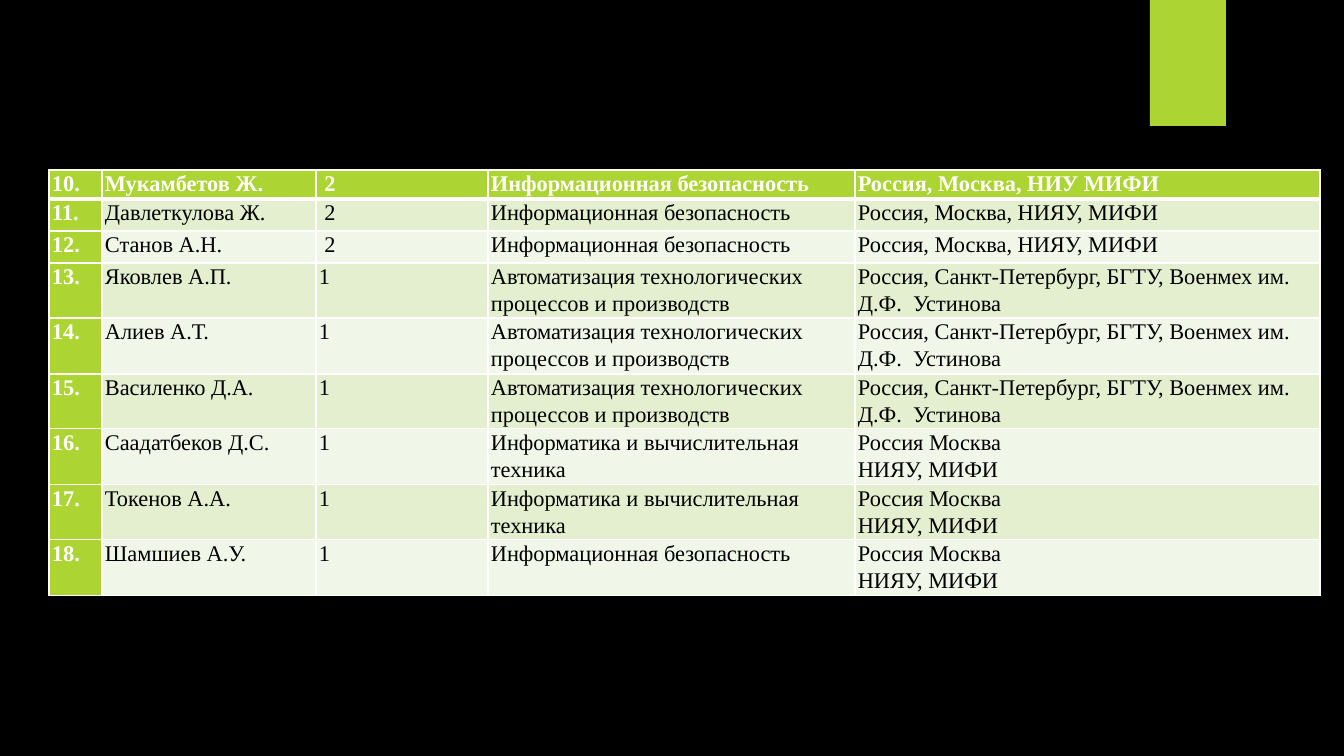
from lxml.etree import SubElement
from pptx import Presentation
from pptx.dml.color import RGBColor
from pptx.enum.shapes import MSO_SHAPE as Preset
from pptx.oxml.ns import qn
from pptx.util import Pt

PX = 914400 / 100.8
GREEN, WHITE, BLACK = "ACD433", "FFFFFF", "000000"
BANDS = ["F1F7E8", "E3EFCE"]
SECURITY = "Информационная безопасность"
AUTOMATION = "Автоматизация технологических процессов и производств"
COMPUTING = "Информатика и вычислительная техника"
MEPHI = "Россия, Москва, НИЯУ, МИФИ"
MEPHI_SHORT = "Россия Москва\nНИЯУ, МИФИ"
VOENMEH = "Россия, Санкт-Петербург, БГТУ, Военмех им. Д.Ф.  Устинова"
STUDENTS = [
    ("Мукамбетов Ж.", " 2", SECURITY, "Россия, Москва, НИУ МИФИ"),
    ("Давлеткулова Ж.", " 2", SECURITY, MEPHI),
    ("Станов А.Н.", " 2", SECURITY, MEPHI),
    ("Яковлев А.П.", "1", AUTOMATION, VOENMEH),
    ("Алиев А.Т.", "1", AUTOMATION, VOENMEH),
    ("Василенко Д.А.", "1", AUTOMATION, VOENMEH),
    ("Саадатбеков Д.С.", "1", COMPUTING, MEPHI_SHORT),
    ("Токенов А.А.", "1", COMPUTING, MEPHI_SHORT),
    ("Шамшиев А.У.", "1", SECURITY, MEPHI_SHORT),
]
FIRST_NUMBER = 10
COLUMNS = [53, 214, 172, 367, 465]
ROWS = [29, 32, 32] + [55, 56] * 3


def px(length):
    return round(length * PX)


def color(value):
    return RGBColor.from_string(value)


class SlideBuilder:
    """Holds the table style and the current slide."""

    font = {"name": "Times New Roman", "size": Pt(16)}
    margins = {"margin_left": px(3), "margin_right": px(3),
               "margin_top": 0, "margin_bottom": 0}

    def __init__(self, deck, background):
        self.page = deck.slides.add_slide(deck.slide_layouts[6])
        fill = self.page.background.fill
        fill.solid()
        fill.fore_color.rgb = color(background)

    def block(self, left, top, width, height, fill):
        box = self.page.shapes.add_shape(
            Preset.RECTANGLE, px(left), px(top), px(width), px(height))
        box.shadow.inherit = False
        box.fill.solid()
        box.fill.fore_color.rgb = color(fill)
        box.line.fill.background()

    def borders(self, cell, **widths):
        properties = cell._tc.get_or_add_tcPr()
        for side in "LRTB":
            line = SubElement(properties, qn(f"a:ln{side}"),
                              w=str(Pt(widths.get(side, 1))))
            fill = SubElement(line, qn("a:solidFill"))
            SubElement(fill, qn("a:srgbClr"), val=WHITE)

    def fill_cell(self, cell, text, fill, ink, bold):
        cell.fill.solid()
        cell.fill.fore_color.rgb = color(fill)
        for name, value in self.margins.items():
            setattr(cell, name, value)
        cell.text_frame.text = text
        for para in cell.text_frame.paragraphs:
            para.line_spacing = 1.07
            for span in para.runs:
                for name, value in {**self.font, "bold": bold}.items():
                    setattr(span.font, name, value)
                span.font.color.rgb = color(ink)

    def table(self, left, top, columns, rows, records):
        table = self.page.shapes.add_table(
            len(rows), len(columns), px(left), px(top),
            px(sum(columns)), px(sum(rows))).table
        for column, width in zip(table.columns, columns):
            column.width = px(width)
        for row, height in zip(table.rows, rows):
            row.height = px(height)
        header_rule = {0: {"B": 3}, 1: {"T": 3}}
        for i, record in enumerate(records):
            for j, text in enumerate(record):
                cell = table.cell(i, j)
                heading = i == 0 or j == 0
                self.borders(cell, **header_rule.get(i, {}))
                self.fill_cell(cell, text, GREEN if heading else BANDS[i % 2],
                               WHITE if heading else BLACK, heading)


def main():
    deck = Presentation()
    deck.slide_width, deck.slide_height = px(1344), px(756)
    builder = SlideBuilder(deck, BLACK)
    builder.block(1150, 0, 76, 126, GREEN)
    records = [(f"{number}.", *student)
               for number, student in enumerate(STUDENTS, FIRST_NUMBER)]
    builder.table(49, 170, COLUMNS, ROWS, records)
    deck.save("out.pptx")


if __name__ == "__main__":
    main()
